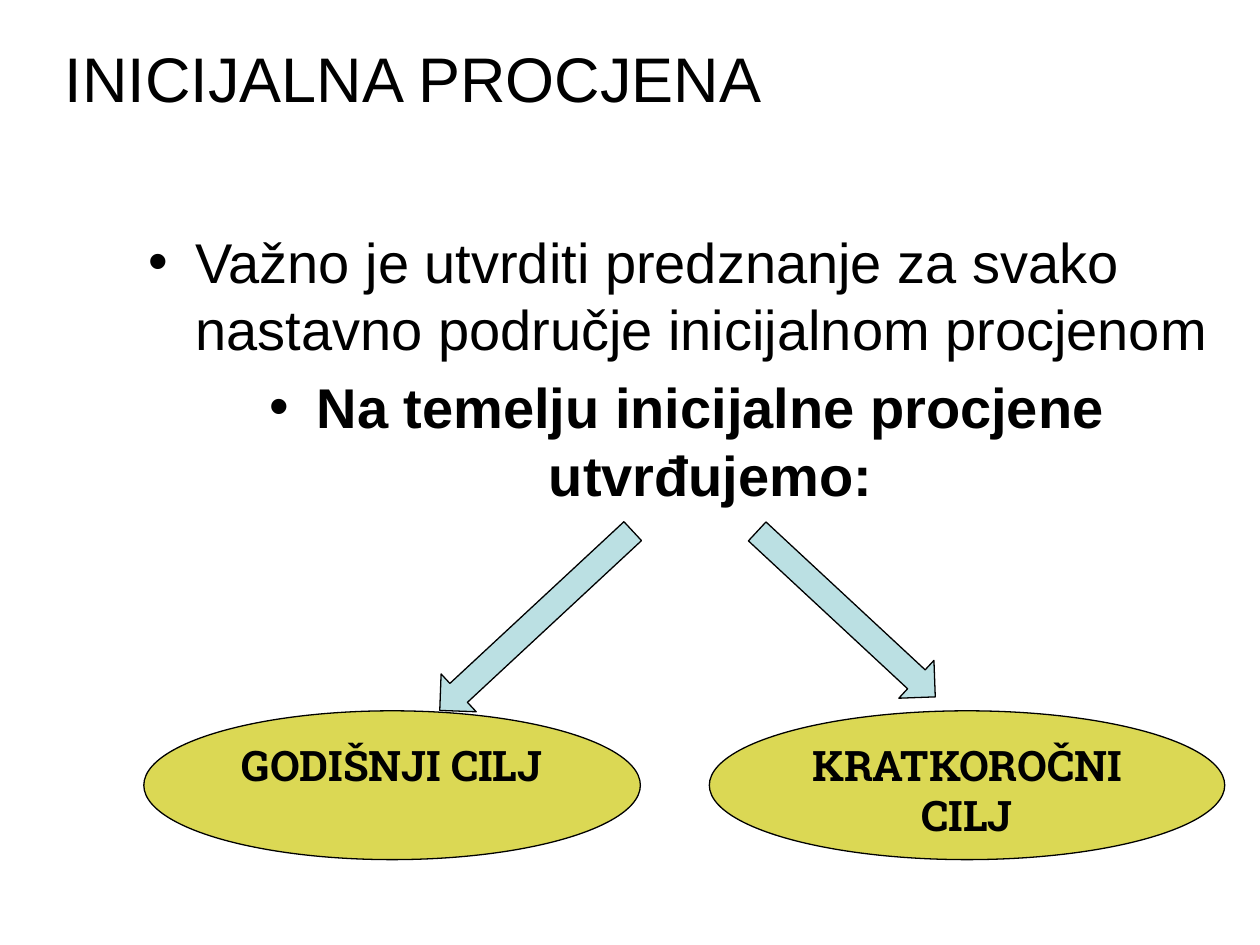
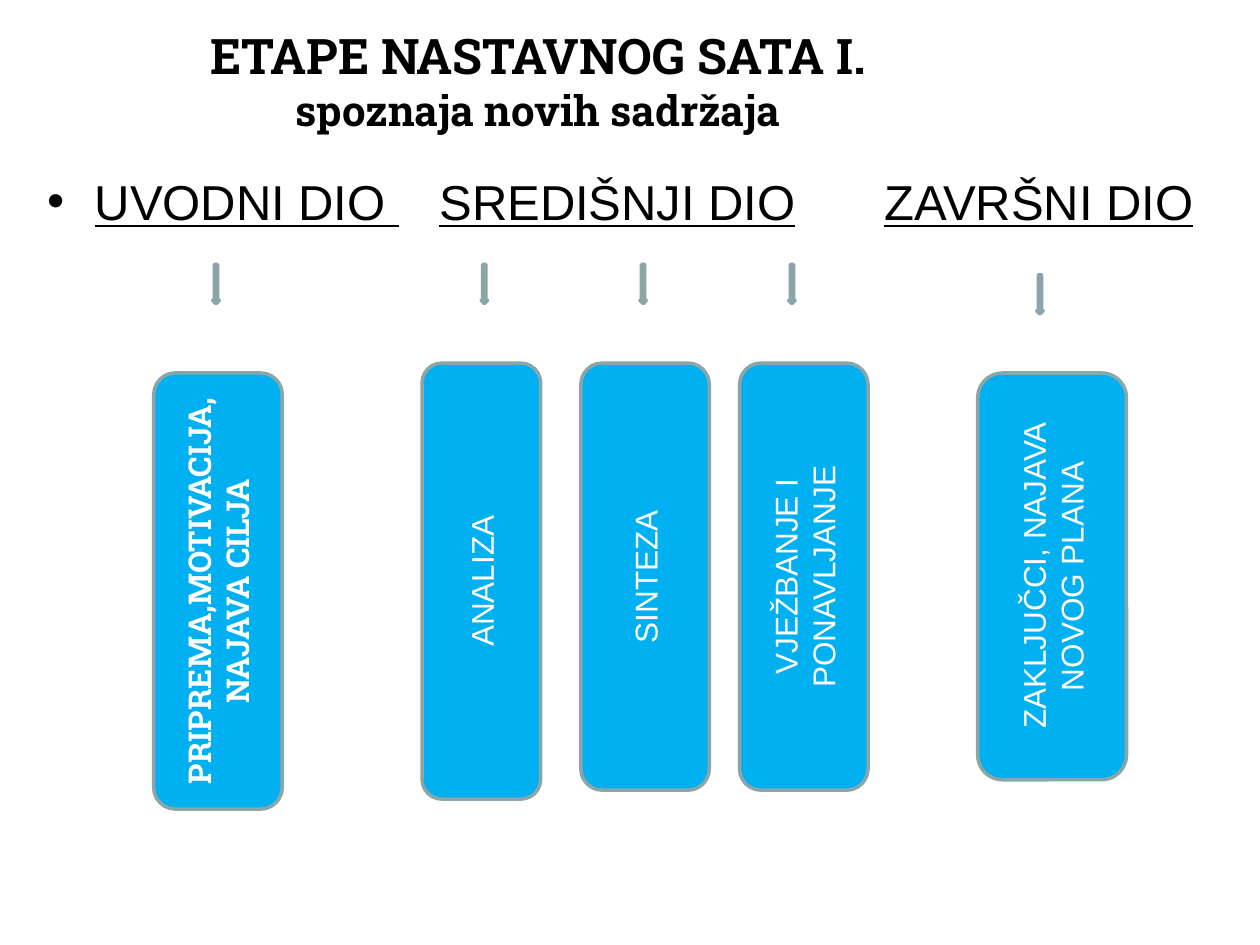
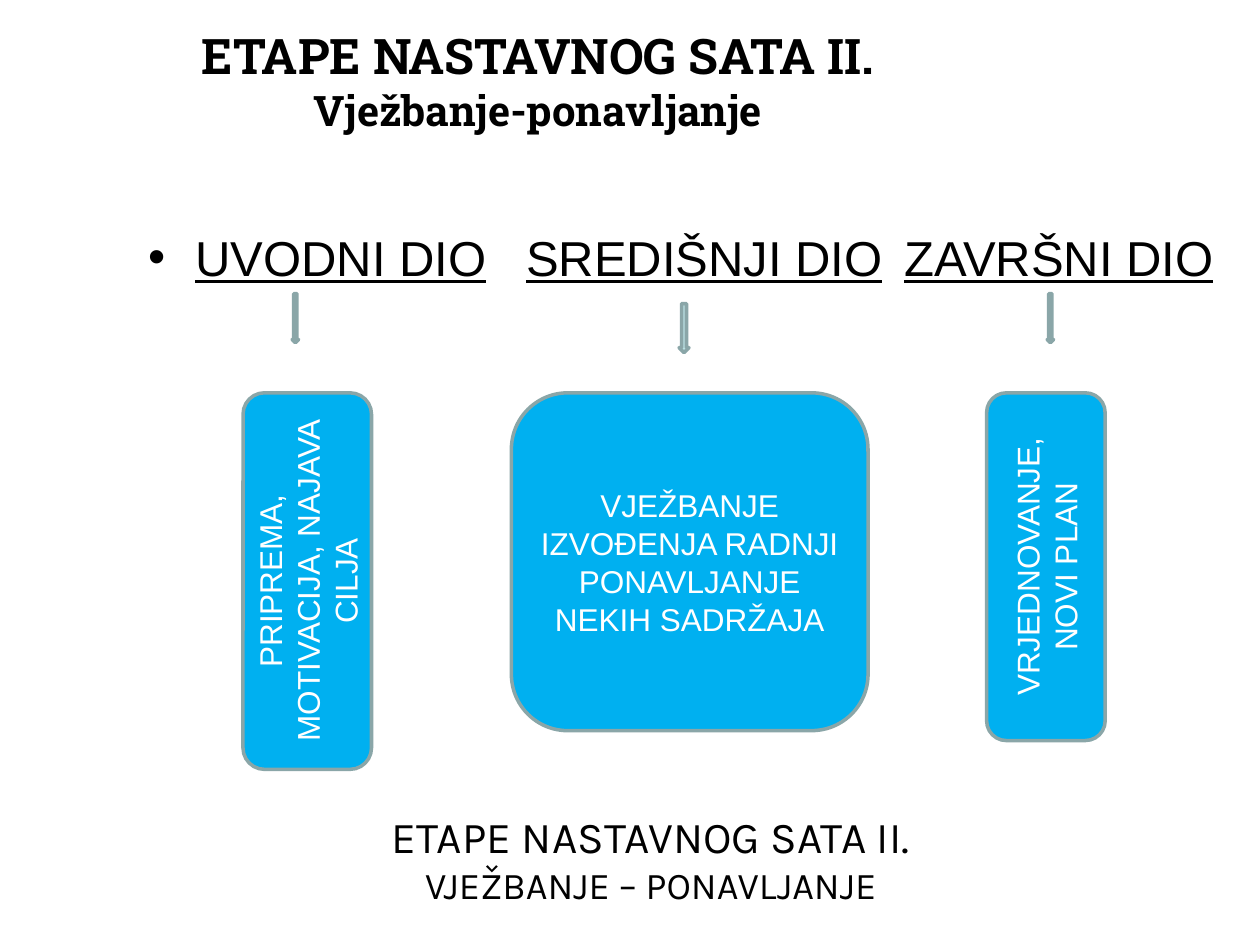
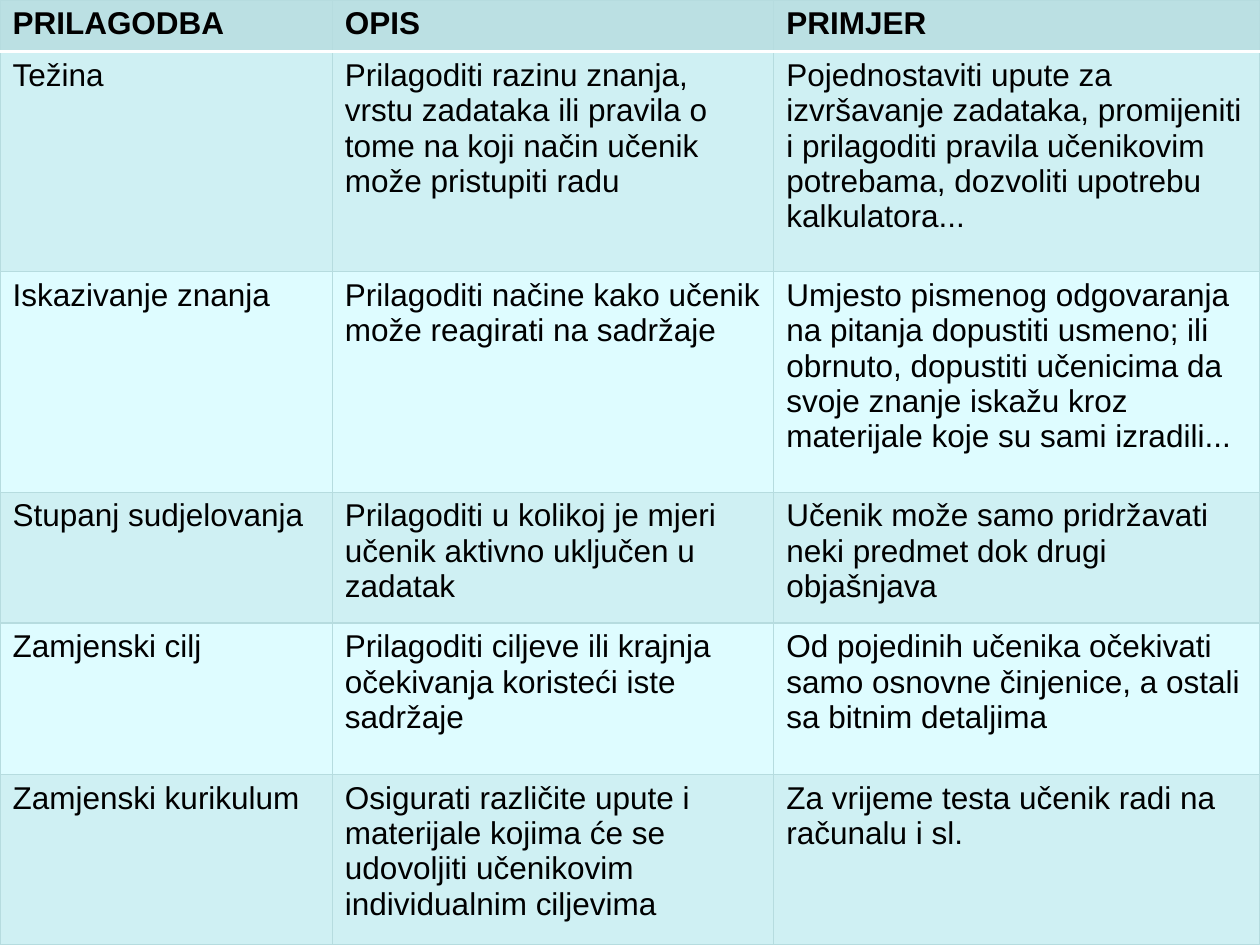
from dataclasses import dataclass

import pptx
import pptx.dml.color
import pptx.enum.shapes
import pptx.enum.text
import pptx.oxml.ns
import pptx.util
from lxml import etree

Cm = pptx.util.Cm
Pt = pptx.util.Pt
Shape = pptx.enum.shapes.MSO_SHAPE
Align = pptx.enum.text.PP_ALIGN
Anchor = pptx.enum.text.MSO_ANCHOR
qn = pptx.oxml.ns.qn


@dataclass(frozen=True)
class Theme:
    # Fonts
    sans: str = "Arial"
    slab: str = "Roboto Slab"
    caption: str = "Karla"
    # Colours
    ink: str = "000000"
    paper: str = "FFFFFF"
    arrow: str = "BBE0E3"
    goal: str = "DBD854"
    stage: str = "00B0F0"
    stage_line: str = "8AA6A8"
    grid: str = "B6DCDF"
    band: str = "CFF0F3"
    plain_row: str = "DEFCFF"
    # Type sizes in points
    title: float = 36
    body: float = 32
    heading: float = 28
    subheading: float = 24
    small: float = 18
    caption_top: float = 25.2
    caption_sub: float = 21.6


T = Theme()
DEFAULT_INSETS = (0.25, 0.13, 0.25, 0.13)
BODY_INDENT = 0.95


def rgb(value):
    return pptx.dml.color.RGBColor.from_string(value)


# Text

def add_run(p, text, size, font=T.sans, color=T.ink, bold=False, underline=False):
    r = p.add_run()
    r.text = text
    r.font.size, r.font.name = Pt(size), font
    r.font.bold, r.font.underline = bold, underline
    r.font.color.rgb = rgb(color)
    return r


def set_frame(tf, anchor=Anchor.TOP, insets=DEFAULT_INSETS):
    tf.word_wrap = True
    tf.vertical_anchor = anchor
    tf.margin_left, tf.margin_top, tf.margin_right, tf.margin_bottom = map(Cm, insets)


def next_paragraph(tf, align=Align.LEFT):
    first = tf.paragraphs[0]
    p = tf.add_paragraph() if first.runs else first
    p.alignment = align
    return p


def add_bullet(p, tab_stops=()):
    pPr = p._p.get_or_add_pPr()
    pPr.set("marL", str(Cm(BODY_INDENT)))
    pPr.set("indent", str(-Cm(BODY_INDENT)))
    color = etree.SubElement(pPr, qn("a:buClr"))
    etree.SubElement(color, qn("a:srgbClr"), val=T.ink)
    etree.SubElement(pPr, qn("a:buFont"), typeface=T.sans)
    etree.SubElement(pPr, qn("a:buChar"), char="•")
    if tab_stops:
        tabs = etree.SubElement(pPr, qn("a:tabLst"))
        for stop in tab_stops:
            etree.SubElement(tabs, qn("a:tab"), pos=str(Cm(stop)), algn="l")


def add_text_area(s, box, anchor=Anchor.TOP):
    sp = s.shapes.add_textbox(*map(Cm, box))
    set_frame(sp.text_frame, anchor)
    return sp.text_frame


# Shapes

def add_figure(s, kind, box, fill, line=None, width=0.75):
    sp = s.shapes.add_shape(kind, *map(Cm, box))
    sp.shadow.inherit = False
    sp.fill.solid()
    sp.fill.fore_color.rgb = rgb(fill)
    if line:
        sp.line.color.rgb = rgb(line)
        sp.line.width = Pt(width)
    else:
        sp.line.fill.background()
    return sp


def add_wide_arrow(s, box, rotation):
    sp = add_figure(s, Shape.DOWN_ARROW, box, T.arrow, T.ink)
    sp.rotation = rotation


def add_thin_arrow(s, box):
    add_figure(s, Shape.DOWN_ARROW, box, T.arrow, T.stage_line, 2)


def add_goal(s, box, text):
    tf = add_figure(s, Shape.OVAL, box, T.goal, T.ink).text_frame
    set_frame(tf)
    add_run(next_paragraph(tf, Align.CENTER), text, T.subheading, T.slab, bold=True)


def add_stage(s, box, lines, vertical=True, font=T.sans, bold=False):
    sp = add_figure(s, Shape.ROUNDED_RECTANGLE, box, T.stage, T.stage_line, 2)
    tf = sp.text_frame
    set_frame(tf, Anchor.MIDDLE)
    if vertical:
        tf._txBody.bodyPr.set("vert", "vert270")
    for line in lines:
        p = next_paragraph(tf, Align.CENTER)
        add_run(p, line, T.small, font, T.paper, bold)


def add_lesson_header(s, heading, subheading):
    tf = add_figure(s, Shape.RECTANGLE, (0, 0, 21.69, 3.02), T.paper).text_frame
    set_frame(tf, Anchor.MIDDLE, (0.25, 0.51, 0.25, 0.3))
    tf.auto_size = pptx.enum.text.MSO_AUTO_SIZE.SHAPE_TO_FIT_TEXT
    for text, size in ((heading, T.heading), (subheading, T.subheading)):
        add_run(next_paragraph(tf, Align.CENTER), text, size, T.slab, bold=True)


def add_lesson_parts(s, box, parts, tab_stops):
    p = next_paragraph(add_text_area(s, box))
    add_bullet(p, tab_stops)
    for i, part in enumerate(parts):
        if i:
            add_run(p, "\t", T.heading)
        add_run(p, part, T.heading, underline=True)


# Table

def set_borders(cell, **lines):
    tcPr = cell._tc.get_or_add_tcPr()
    for i, side in enumerate(("lnL", "lnR", "lnT", "lnB")):
        color, width = lines.get(side, (T.grid, 0.75))
        ln = etree.Element(qn("a:" + side), w=str(Pt(width)))
        fill = etree.SubElement(ln, qn("a:solidFill"))
        etree.SubElement(fill, qn("a:srgbClr"), val=color)
        tcPr.insert(i, ln)


def add_grid(s, rows, widths, heights):
    frame = s.shapes.add_table(len(rows), len(widths), 0, 0,
                               Cm(sum(widths)), Cm(sum(heights)))
    table = frame.table
    table.horz_banding = False
    for column, width in zip(table.columns, widths):
        column.width = Cm(width)
    header_rule = (T.paper, 2)
    for i, (texts, height) in enumerate(zip(rows, heights)):
        table.rows[i].height = Cm(height)
        fill = T.arrow if i == 0 else T.band if i % 2 else T.plain_row
        rules = {0: {"lnB": header_rule}, 1: {"lnT": header_rule}}.get(i, {})
        for j, text in enumerate(texts):
            cell = table.cell(i, j)
            cell.fill.solid()
            cell.fill.fore_color.rgb = rgb(fill)
            set_borders(cell, **rules)
            add_run(cell.text_frame.paragraphs[0], text, T.small, bold=i == 0)


# Slides

BODY_BOX = (2.74, 4.45, 22.23, 12.7)
LESSON_PARTS = ("UVODNI DIO", "SREDIŠNJI DIO", "ZAVRŠNI DIO")


def build_assessment(s):
    title = add_figure(s, Shape.RECTANGLE, (0, 0, 21.89, 3.12), T.paper)
    set_frame(title.text_frame, Anchor.MIDDLE, (1.31, 0, 0.2, 0))
    add_run(next_paragraph(title.text_frame), "INICIJALNA PROCJENA", T.title)

    tf = add_text_area(s, BODY_BOX)
    p = next_paragraph(tf)
    add_bullet(p)
    add_run(p, "Važno je utvrditi predznanje za svako nastavno područje "
               "inicijalnom procjenom", T.body)
    p = next_paragraph(tf, Align.CENTER)
    add_bullet(p)
    p.space_before = Pt(T.body * 0.2)
    add_run(p, "Na temelju inicijalne procjene utvrđujemo:", T.body, bold=True)

    add_wide_arrow(s, (10.29, 9.86, 1.04, 5.31), 47.1)
    add_wide_arrow(s, (16.54, 9.93, 1.04, 4.9), 312.9)
    add_goal(s, (2.9, 14.33, 10.01, 3), "GODIŠNJI CILJ")
    add_goal(s, (14.3, 14.33, 10.39, 3), "KRATKOROČNI CILJ")


def build_new_content(s):
    intro, middle, closing = LESSON_PARTS
    add_lesson_parts(s, (0.71, 3.33, 24.69, 13.82),
                     (intro + " ", middle, closing), (7.9, 16.87))
    for left, top in ((4.29, 5.33), (9.7, 5.33), (12.9, 5.33),
                      (15.9, 5.33), (20.9, 5.54)):
        add_thin_arrow(s, (left, top, 0.13, 0.79))
    add_stage(s, (3.1, 7.52, 2.59, 8.79), ["PRIPREMA,MOTIVACIJA, NAJAVA CILJA"],
              font=T.slab, bold=True)
    for box, text in (
        ((8.51, 7.32, 2.39, 8.79), "ANALIZA"),
        ((11.71, 7.32, 2.59, 8.61), "SINTEZA"),
        ((14.91, 7.32, 2.59, 8.61), "VJEŽBANJE I PONAVLJANJE"),
        ((19.71, 7.52, 3, 8.2), "ZAKLJUČCI, NAJAVA NOVOG PLANA"),
    ):
        add_stage(s, box, [text])
    add_lesson_header(s, "ETAPE NASTAVNOG SATA I.", "spoznaja novih sadržaja")


def build_practice(s):
    tf = add_text_area(s, (0.84, 16.13, 24.56, 2.34), Anchor.MIDDLE)
    p = next_paragraph(tf, Align.CENTER)
    add_run(p, "ETAPE NASTAVNOG SATA II.", T.caption_top, T.caption)
    p.add_line_break()
    add_run(p, "VJEŽBANJE – PONAVLJANJE", T.caption_sub, T.caption)

    add_lesson_parts(s, BODY_BOX, LESSON_PARTS, (7.62, 15.24))
    for left, top, width in ((5.89, 5.92, 0.13), (13.69, 6.12, 0.2),
                             (21.11, 5.92, 0.13)):
        add_thin_arrow(s, (left, top, width, 0.99))
    add_stage(s, (4.9, 7.92, 2.59, 7.59), ["PRIPREMA, MOTIVACIJA, NAJAVA CILJA"])
    add_stage(s, (10.31, 7.92, 7.19, 6.81),
              ["VJEŽBANJE IZVOĐENJA RADNJI", "PONAVLJANJE NEKIH SADRŽAJA"],
              vertical=False)
    add_stage(s, (19.89, 7.92, 2.39, 7.01), ["VRJEDNOVANJE, NOVI PLAN"])
    add_lesson_header(s, "ETAPE NASTAVNOG SATA II.", "Vježbanje-ponavljanje")


def build_adaptations(s):
    rows = [
        ("PRILAGODBA", "OPIS", "PRIMJER"),
        ("Težina",
         "Prilagoditi razinu znanja, vrstu zadataka ili pravila o tome na koji "
         "način učenik može pristupiti radu",
         "Pojednostaviti upute za izvršavanje zadataka, promijeniti i prilagoditi "
         "pravila učenikovim potrebama, dozvoliti upotrebu kalkulatora..."),
        ("Iskazivanje znanja",
         "Prilagoditi načine kako učenik može reagirati na sadržaje",
         "Umjesto pismenog odgovaranja na pitanja dopustiti usmeno; ili obrnuto, "
         "dopustiti učenicima da svoje znanje iskažu kroz materijale koje su sami "
         "izradili..."),
        ("Stupanj sudjelovanja",
         "Prilagoditi u kolikoj je mjeri učenik aktivno uključen u zadatak",
         "Učenik može samo pridržavati neki predmet dok drugi objašnjava"),
        ("Zamjenski cilj",
         "Prilagoditi ciljeve ili krajnja očekivanja koristeći iste sadržaje",
         "Od pojedinih učenika očekivati samo osnovne činjenice, a ostali sa "
         "bitnim detaljima"),
        ("Zamjenski kurikulum",
         "Osigurati različite upute i materijale kojima će se udovoljiti "
         "učenikovim individualnim ciljevima",
         "Za vrijeme testa učenik radi na računalu i sl."),
    ]
    add_grid(s, rows, (6.7, 8.9, 9.8), (1.04, 4.44, 4.44, 2.64, 3.05, 3.43))


def main():
    prs = pptx.Presentation()
    prs.slide_width, prs.slide_height = Cm(25.4), Cm(19.05)
    blank = prs.slide_layouts[6]
    for build in (build_assessment, build_new_content, build_practice,
                  build_adaptations):
        build(prs.slides.add_slide(blank))
    prs.save("out.pptx")


if __name__ == "__main__":
    main()
